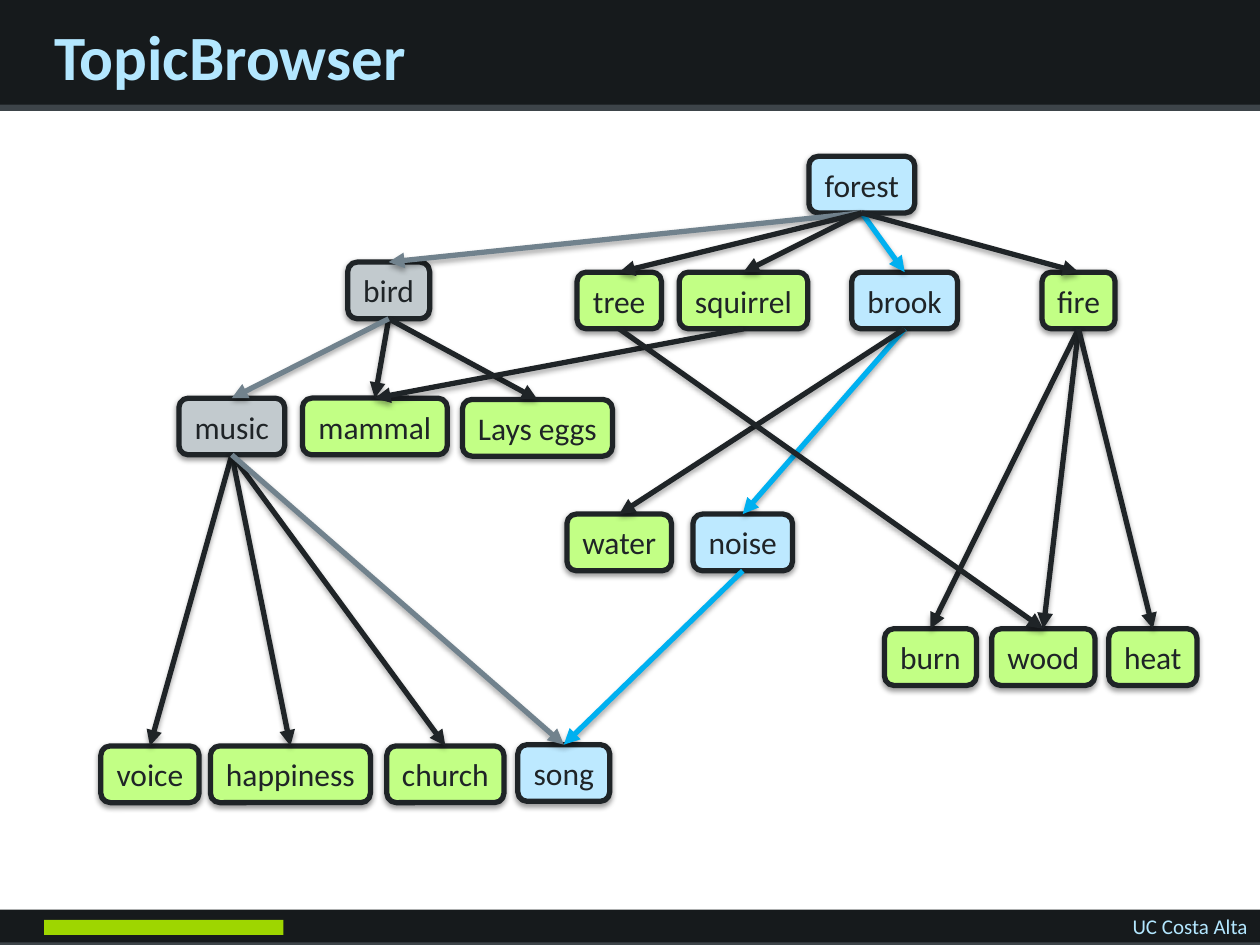
import dataclasses
import typing

import pptx
import pptx.dml.color
import pptx.enum.dml
import pptx.enum.shapes
import pptx.enum.text
import pptx.oxml
import pptx.oxml.ns
import pptx.util
from pptx.util import Inches

COLORS = {
    "bar": "161A1C",
    "rule": "3D4449",
    "lime": "9ED600",
    "sky": "B3E7FF",
    "ink": "1F2427",
    "path": "BDE9FF",
    "rejected": "C2CACE",
    "concept": "C2FF85",
    "path_link": "00B0F0",
    "rejected_link": "71828D",
}
NODE_HEIGHT = 0.45
LINE_WIDTH = pptx.util.Pt(3)
LEFT = pptx.enum.text.PP_ALIGN.LEFT
CENTER = pptx.enum.text.PP_ALIGN.CENTER
RIGHT = pptx.enum.text.PP_ALIGN.RIGHT
BOTTOM_SITE, TOP_SITE = 2, 0


@dataclasses.dataclass
class Band:
    top: float
    height: float
    color: str
    left: float = 0
    width: float = 10


@dataclasses.dataclass
class Node:
    label: str
    left: float
    top: float
    width: float
    color: str = "concept"


@dataclasses.dataclass
class Link:
    parent: str
    child: str
    color: str = "ink"


BANDS = [
    Band(0, 0.84, "bar"),
    Band(7.22, 0.27, "bar"),
    Band(0.83, 0.05, "rule"),
    Band(7.48, 0.05, "rule"),
    Band(7.3, 0.12, "lime", left=0.35, width=1.9),
]
NODES = [
    Node("forest", 6.42, 1.24, 0.84, "path"),
    Node("brook", 6.76, 2.16, 0.84, "path"),
    Node("bird", 2.76, 2.08, 0.65, "rejected"),
    Node("squirrel", 5.39, 2.16, 1.02),
    Node("fire", 8.27, 2.16, 0.58),
    Node("tree", 4.58, 2.16, 0.67),
    Node("mammal", 2.4, 3.16, 1.15),
    Node("Lays eggs", 3.67, 3.17, 1.19),
    Node("music", 1.42, 3.16, 0.84, "rejected"),
    Node("church", 3.07, 5.92, 0.93),
    Node("voice", 0.8, 5.92, 0.78),
    Node("happiness", 1.67, 5.92, 1.27),
    Node("song", 4.11, 5.91, 0.73, "path"),
    Node("heat", 8.8, 4.99, 0.7),
    Node("wood", 7.87, 4.99, 0.82),
    Node("burn", 7.02, 4.99, 0.73),
    Node("water", 4.5, 4.08, 0.83),
    Node("noise", 5.5, 4.08, 0.79, "path"),
]
LINKS = [
    Link("forest", "brook", "path_link"),
    Link("forest", "bird", "rejected_link"),
    Link("forest", "tree"),
    Link("forest", "squirrel"),
    Link("forest", "fire"),
    Link("bird", "mammal"),
    Link("bird", "Lays eggs"),
    Link("bird", "music", "rejected_link"),
    Link("music", "voice"),
    Link("music", "happiness"),
    Link("music", "church"),
    Link("music", "song", "rejected_link"),
    Link("fire", "burn"),
    Link("fire", "wood"),
    Link("fire", "heat"),
    Link("squirrel", "mammal"),
    Link("brook", "noise", "path_link"),
    Link("brook", "water"),
    Link("noise", "song", "path_link"),
    Link("tree", "wood"),
]


def rgb(name: str) -> pptx.dml.color.RGBColor:
    return pptx.dml.color.RGBColor.from_string(COLORS[name])


def write(shape, text: str, *, color: str, size: float, bold: bool = False,
          align=LEFT, anchor=pptx.enum.text.MSO_ANCHOR.MIDDLE, wrap: bool = True) -> None:
    frame = shape.text_frame
    frame.word_wrap = wrap
    frame.auto_size = pptx.enum.text.MSO_AUTO_SIZE.NONE
    frame.vertical_anchor = anchor
    paragraph = frame.paragraphs[0]
    paragraph.alignment = align
    run = paragraph.add_run()
    run.text = text
    run.font.name = "Calibri"
    run.font.size = pptx.util.Pt(size)
    run.font.bold = bold
    run.font.color.rgb = rgb(color)


def cast_shadow(shape, distance: float, opacity: int) -> None:
    properties = shape._element.spPr
    properties.append(pptx.oxml.parse_xml(
        f'<a:effectLst {pptx.oxml.ns.nsdecls("a")}>'
        f'<a:outerShdw blurRad="{pptx.util.Pt(3.1)}" dist="{pptx.util.Pt(distance)}" '
        f'dir="5400000" rotWithShape="0"><a:srgbClr val="000000">'
        f'<a:alpha val="{opacity * 1000}"/></a:srgbClr></a:outerShdw></a:effectLst>'))


def draw_band(slide, band: Band) -> None:
    strip = slide.shapes.add_shape(
        pptx.enum.shapes.MSO_SHAPE.RECTANGLE,
        Inches(band.left), Inches(band.top), Inches(band.width), Inches(band.height))
    strip.shadow.inherit = False
    strip.fill.solid()
    strip.fill.fore_color.rgb = rgb(band.color)
    strip.line.fill.background()


def draw_node(slide, node: Node):
    box = slide.shapes.add_shape(
        pptx.enum.shapes.MSO_SHAPE.FLOWCHART_ALTERNATE_PROCESS,
        Inches(node.left), Inches(node.top), Inches(node.width), Inches(NODE_HEIGHT))
    box.fill.solid()
    box.fill.fore_color.rgb = rgb(node.color)
    box.line.color.rgb = rgb("ink")
    box.line.width = LINE_WIDTH
    cast_shadow(box, distance=1.6, opacity=38)
    write(box, node.label, color="ink", size=18, align=CENTER, wrap=False)
    return box


def draw_link(slide, link: Link, boxes: typing.Dict[str, typing.Any]) -> None:
    arrow = slide.shapes.add_connector(
        pptx.enum.shapes.MSO_CONNECTOR.STRAIGHT, 0, 0, 0, 0)
    arrow.begin_connect(boxes[link.parent], BOTTOM_SITE)
    arrow.end_connect(boxes[link.child], TOP_SITE)
    arrow.line.color.rgb = rgb(link.color)
    arrow.line.width = LINE_WIDTH
    arrow.line._get_or_add_ln().append(pptx.oxml.parse_xml(
        f'<a:tailEnd {pptx.oxml.ns.nsdecls("a")} type="triangle"/>'))
    cast_shadow(arrow, distance=1.8, opacity=35)


def main() -> None:
    deck = pptx.Presentation()
    deck.slide_width, deck.slide_height = Inches(10), Inches(7.5)
    slide = deck.slides.add_slide(deck.slide_layouts[5])
    for band in BANDS:
        draw_band(slide, band)

    university = slide.shapes.add_textbox(Inches(6.67), Inches(7.2), Inches(3.33), Inches(0.3))
    write(university, "UC Costa Alta", color="sky", size=12, align=RIGHT,
          anchor=pptx.enum.text.MSO_ANCHOR.TOP)

    title = slide.shapes.title
    title.left, title.top, title.width, title.height = map(Inches, (0.33, 0, 9, 0.87))
    write(title, "TopicBrowser", color="sky", size=36, bold=True)
    slide.shapes._spTree.append(title._element)

    boxes = {node.label: draw_node(slide, node) for node in NODES}
    for link in LINKS:
        draw_link(slide, link, boxes)
    deck.save("out.pptx")


if __name__ == "__main__":
    main()
